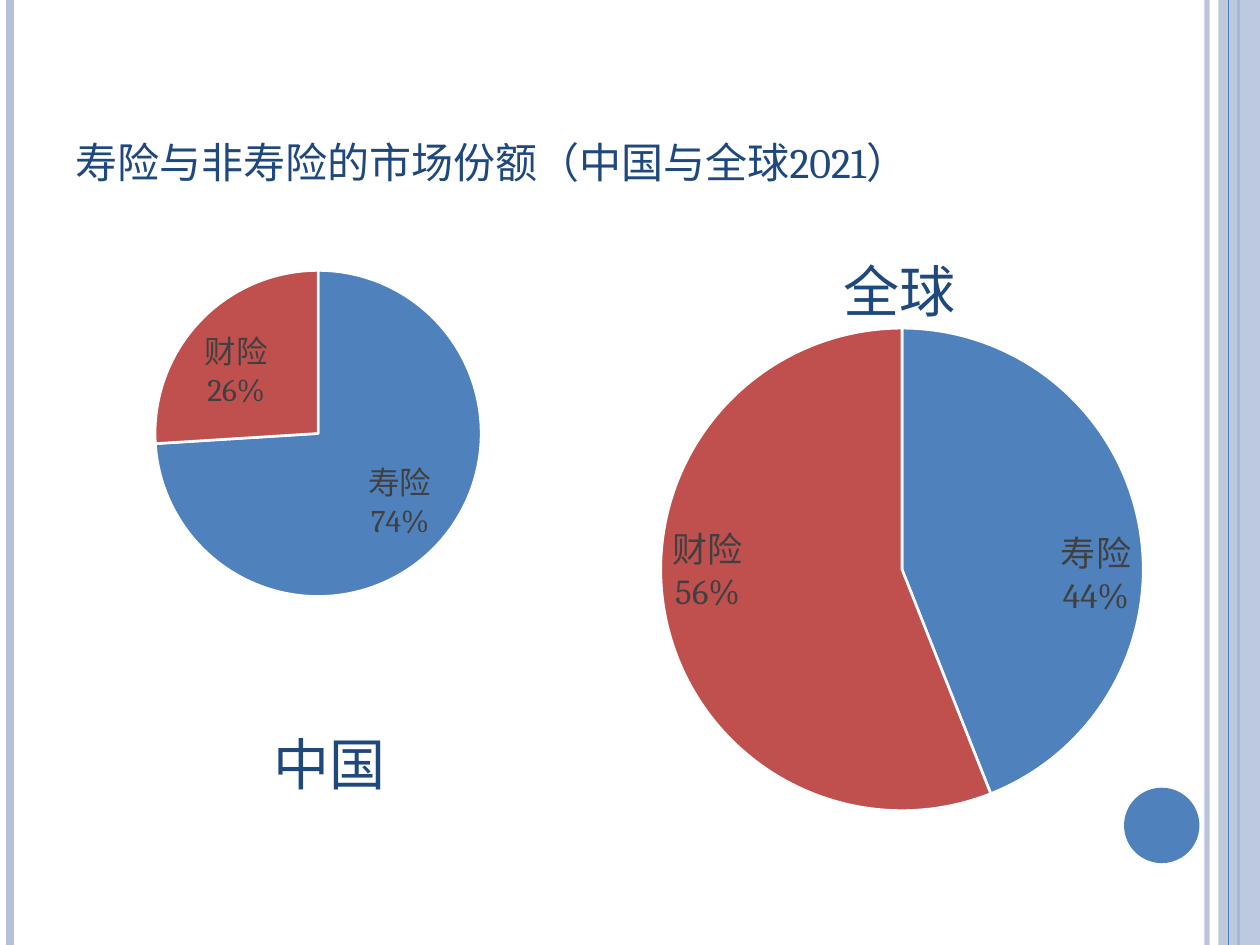
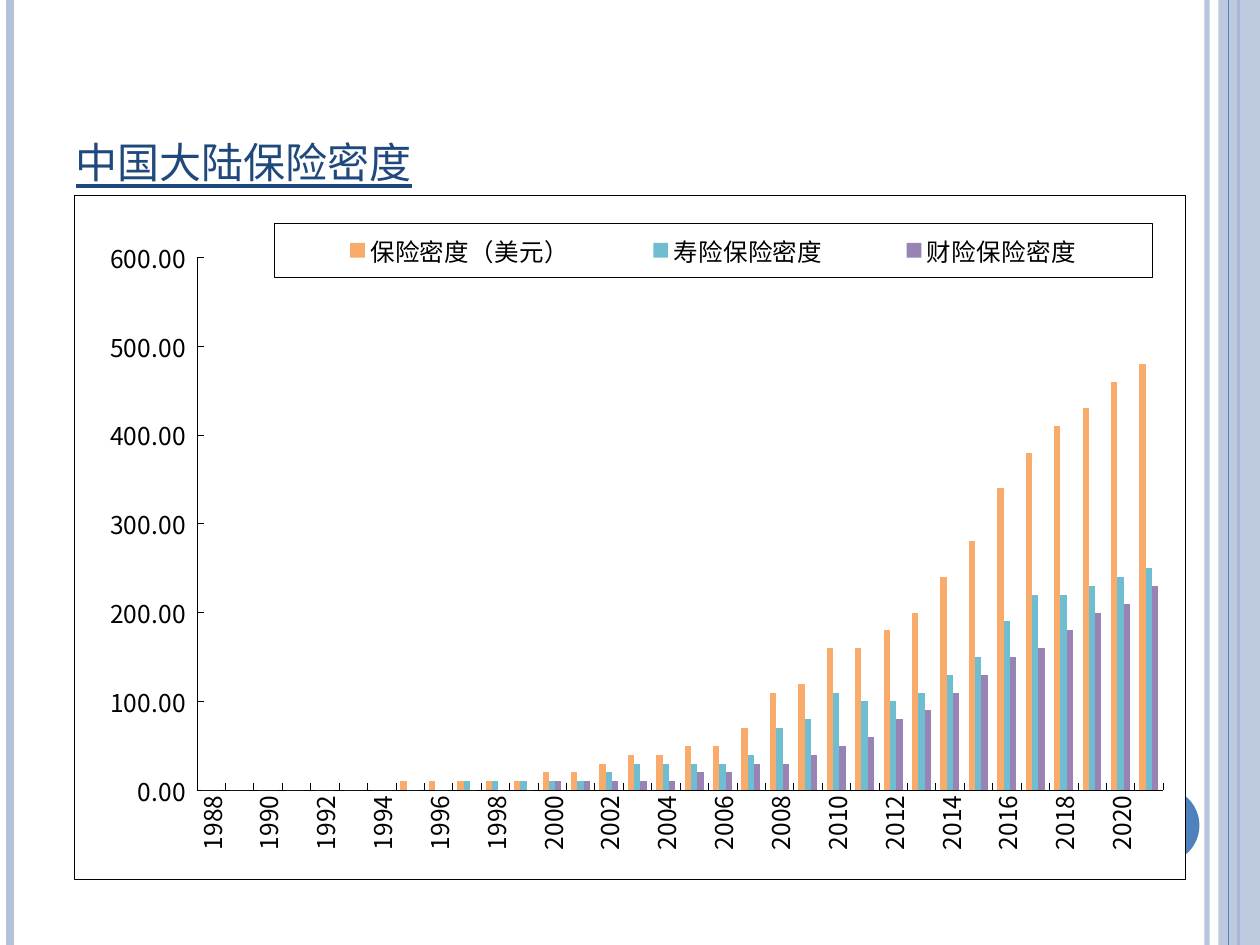
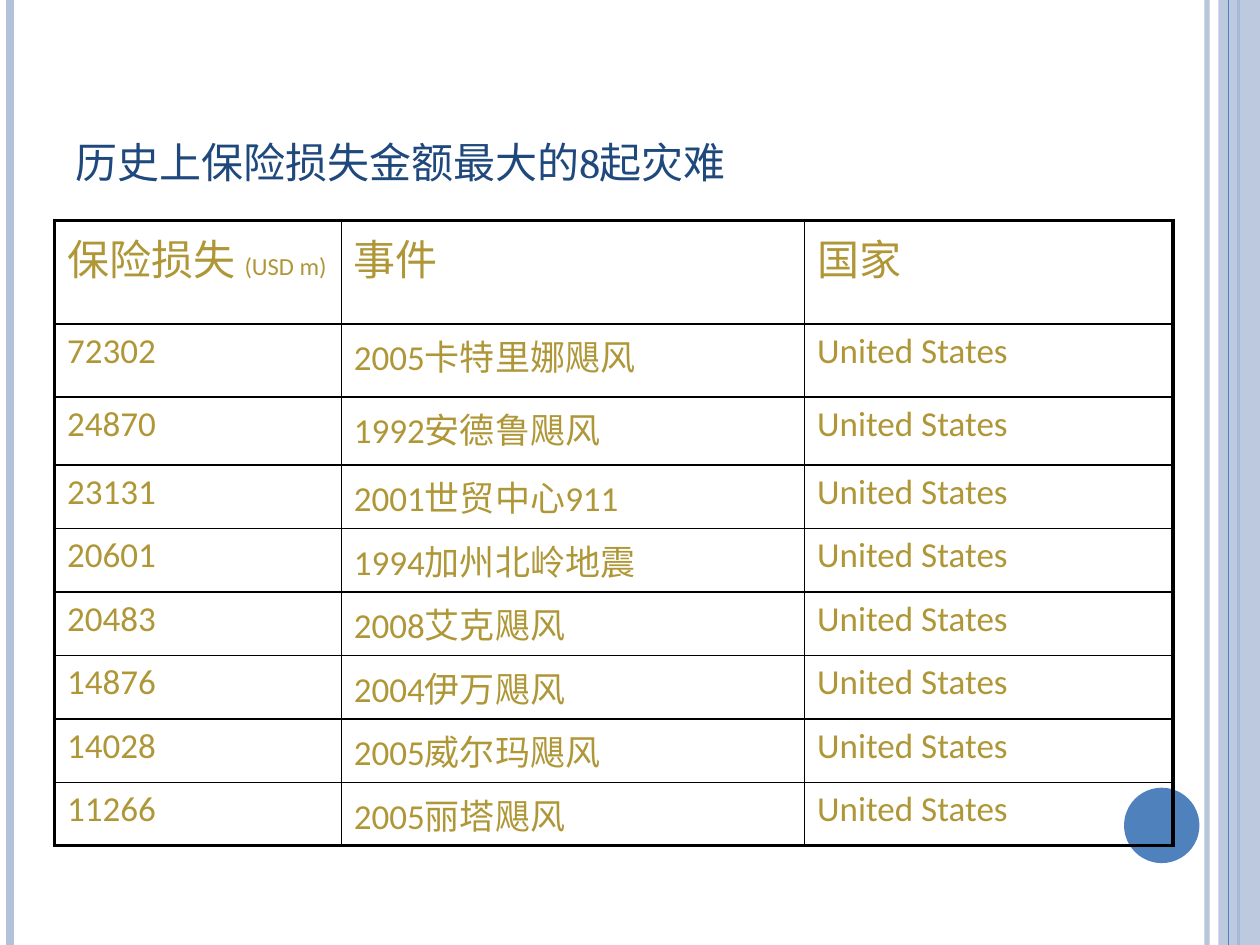
import dataclasses

import lxml.etree
import pptx
import pptx.chart.data
import pptx.dml.color
import pptx.enum.chart
import pptx.enum.shapes
import pptx.enum.text
import pptx.oxml
import pptx.oxml.ns
import pptx.util

Cm, Pt = pptx.util.Cm, pptx.util.Pt
RGB = pptx.dml.color.RGBColor.from_string
qn = pptx.oxml.ns.qn


@dataclasses.dataclass(frozen=True)
class Theme:
    navy: str = "1F497D"
    blue: str = "4F81BD"
    pale: str = "B3C1DB"
    red: str = "C0504D"
    gold: str = "AF9738"
    grey: str = "404040"
    black: str = "000000"
    white: str = "FFFFFF"
    density: tuple = ("F9AB6B", "6FBDD1", "9983B5")
    heading_font: str = "Cambria"
    table_font: str = "Calibri"
    axis_font: str = "Noto Sans CJK SC"
    title_size: int = 30
    caption_size: int = 32
    header_size: int = 24
    cell_size: int = 20
    small_size: int = 14


theme = Theme()


def style(font, face, size, color):
    font.name, font.size = face, Pt(size)
    font.color.rgb = RGB(color)


def set_layout(parent, index, x, y, w, h, inner=False):
    """Give a chart part a manual layout, in fractions of the chart."""
    for old in parent.findall(qn("c:layout")):
        parent.remove(old)
    layout = lxml.etree.Element(qn("c:layout"))
    manual = lxml.etree.SubElement(layout, qn("c:manualLayout"))
    settings = [("layoutTarget", "inner")] if inner else []
    settings += [("xMode", "edge"), ("yMode", "edge"), ("x", x), ("y", y), ("w", w), ("h", h)]
    for tag, value in settings:
        lxml.etree.SubElement(manual, qn(f"c:{tag}")).set("val", str(value))
    parent.insert(index, layout)


prs = pptx.Presentation()
prs.slide_width, prs.slide_height = Cm(25.4), Cm(19.05)
title_only = prs.slide_layouts[5]
for placeholder in list(title_only.placeholders)[1:]:
    placeholder.element.getparent().remove(placeholder.element)

# Titles
titles = [
    ("寿险与非寿险的市场份额（中国与全球2021）", 22.43, False),
    ("中国大陆保险密度", 20.75, True),
    ("历史上保险损失金额最大的8起灾难", 20.75, False),
]
for text, width, underlined in titles:
    title = prs.slides.add_slide(title_only).shapes.title
    title.left, title.top, title.width, title.height = Cm(1.27), Cm(0.76), Cm(width), Cm(3.18)
    title.text_frame.text = text
    title.text_frame.vertical_anchor = pptx.enum.text.MSO_ANCHOR.BOTTOM
    title.text_frame.auto_size = pptx.enum.text.MSO_AUTO_SIZE.NONE
    heading = title.text_frame.paragraphs[0]
    heading.alignment = pptx.enum.text.PP_ALIGN.LEFT
    style(heading.font, theme.heading_font, theme.title_size, theme.navy)
    heading.font.underline = underlined
    heading.runs[0]._r.get_or_add_rPr().set("cap", "small")
share_slide, density_slide, loss_slide = prs.slides

# Side bands and disc, drawn once and moved to the shared layout
decor = []
for x, color, weight in [(24.33, theme.pale, 3), (0.2, theme.pale, 4.5),
                         (24.97, theme.blue, 1.5), (24.77, theme.blue, 0.75)]:
    rule = share_slide.shapes.add_connector(
        pptx.enum.shapes.MSO_CONNECTOR.STRAIGHT, Cm(x), 0, Cm(x), prs.slide_height)
    rule.line.color.rgb, rule.line.width = RGB(color), Pt(weight)
    lxml.etree.SubElement(rule._element.spPr, qn("a:effectLst"))
    decor.append(rule)
for kind, x, y, w, h, color in [
        (pptx.enum.shapes.MSO_SHAPE.RECTANGLE, 24.56, 0, 0.84, 19.05, theme.pale),
        (pptx.enum.shapes.MSO_SHAPE.OVAL, 22.66, 15.88, 1.52, 1.52, theme.blue)]:
    block = share_slide.shapes.add_shape(kind, Cm(x), Cm(y), Cm(w), Cm(h))
    block.shadow.inherit = False
    block.fill.solid()
    block.fill.fore_color.rgb = RGB(color)
    block.line.fill.background()
    decor.append(block)
edge_rule, left_rule, covered_rule, top_rule, band, disc = decor
for part, opacity in [(edge_rule, 93), (band, 87)]:
    color = next(part._element.spPr.iter(qn("a:srgbClr")))
    lxml.etree.SubElement(color, qn("a:alpha")).set("val", str(opacity * 1000))
for part in (edge_rule, left_rule, covered_rule, band, top_rule, disc):
    title_only.shapes._spTree.append(part._element)

# Slide 1: market shares
for caption, x, y in [("中国", 5.26, 13.64), ("全球", 16.76, 4.11)]:
    label = share_slide.shapes.add_textbox(Cm(x), Cm(y), Cm(2.79), Cm(2.54)).text_frame
    label.word_wrap = True
    label.vertical_anchor = pptx.enum.text.MSO_ANCHOR.BOTTOM
    label.text = caption
    style(label.paragraphs[0].font, theme.heading_font, theme.caption_size, theme.navy)

for shares, x, y, w, h, pie_height, size in [
        ((74, 26), -0.89, 3.94, 14.61, 9.6, 0.69, 18),
        ((44, 56), 10.31, 6.25, 15.75, 10.46, 0.93, 20)]:
    data = pptx.chart.data.CategoryChartData()
    data.categories = ["寿险", "财险"]
    data.add_series("Series 1", shares)
    pie = share_slide.shapes.add_chart(
        pptx.enum.chart.XL_CHART_TYPE.PIE, Cm(x), Cm(y), Cm(w), Cm(h), data).chart
    pie.has_title = pie.has_legend = False
    style(pie.font, theme.heading_font, size, theme.black)
    plot = pie.plots[0]
    plot.vary_by_categories = True
    for index, color in enumerate((theme.blue, theme.red)):
        slice_format = plot.series[0].points[index].format
        slice_format.fill.solid()
        slice_format.fill.fore_color.rgb = RGB(color)
        slice_format.line.color.rgb, slice_format.line.width = RGB(theme.white), Pt(1.5)
    plot.has_data_labels = True
    labels = plot.data_labels
    labels.show_value = False
    labels.show_category_name = labels.show_percentage = True
    labels.number_format, labels.number_format_is_linked = "0%", False
    labels.position = pptx.enum.chart.XL_LABEL_POSITION.INSIDE_END
    style(labels.font, theme.heading_font, size, theme.grey)
    separator = lxml.etree.Element(qn("c:separator"))
    separator.text = "\n"
    labels._element.find(qn("c:showBubbleSize")).addnext(separator)
    pie_width = round(pie_height * h / w, 2)
    set_layout(pie._chartSpace.chart.plotArea, 0, (1 - pie_width) / 2, (1 - pie_height) / 2,
               pie_width, pie_height, inner=True)

# Slide 2: insurance density by year
densities = {
    "保险密度（美元）": [0, 0, 0, 0, 0, 0, 0, 10, 10, 10, 10, 10, 20, 20, 30, 40, 40, 50, 50, 70, 110, 120,
                 160, 160, 180, 200, 240, 280, 340, 380, 410, 430, 460, 480],
    "寿险保险密度": [0, 0, 0, 0, 0, 0, 0, 0, 0, 10, 10, 10, 10, 10, 20, 30, 30, 30, 30, 40, 70, 80,
               110, 100, 100, 110, 130, 150, 190, 220, 220, 230, 240, 250],
    "财险保险密度": [0, 0, 0, 0, 0, 0, 0, 0, 0, 0, 0, 0, 10, 10, 10, 10, 10, 20, 20, 30, 30, 40,
               50, 60, 80, 90, 110, 130, 150, 160, 180, 200, 210, 230],
}
data = pptx.chart.data.CategoryChartData()
data.categories = [str(year) for year in range(1988, 2022)]
for name, values in densities.items():
    data.add_series(name, values)
columns = density_slide.shapes.add_chart(
    pptx.enum.chart.XL_CHART_TYPE.COLUMN_CLUSTERED,
    Cm(1.5), Cm(3.94), Cm(22.4), Cm(13.79), data).chart
columns.has_title = False
style(columns.font, theme.axis_font, theme.small_size, theme.black)
plot = columns.plots[0]
plot.gap_width, plot.overlap, plot.vary_by_categories = 150, 0, False
for series, color in zip(plot.series, theme.density):
    series.format.fill.solid()
    series.format.fill.fore_color.rgb = RGB(color)

# Axes
years, dollars = columns.category_axis, columns.value_axis
for axis in (years, dollars):
    axis.has_major_gridlines = False
    axis.major_tick_mark = pptx.enum.chart.XL_TICK_MARK.INSIDE
    axis.format.line.color.rgb, axis.format.line.width = RGB(theme.black), Pt(0.25)
    style(axis.tick_labels.font, theme.axis_font, theme.small_size, theme.black)
dollars.minimum_scale, dollars.maximum_scale, dollars.major_unit = 0, 600, 100
dollars.tick_labels.number_format = "#,##0.00_ "
dollars.tick_labels.number_format_is_linked = False
upright = years._element.find(qn("c:txPr")).find(qn("a:bodyPr"))
upright.set("rot", "-5400000")
upright.set("vert", "horz")
skip = lxml.etree.Element(qn("c:tickLblSkip"))
skip.set("val", "2")
years._element.find(qn("c:noMultiLvlLbl")).addprevious(skip)

# Legend, plot area and frames
columns.has_legend = True
legend = columns.legend
legend.position = pptx.enum.chart.XL_LEGEND_POSITION.RIGHT
legend.include_in_layout = False
style(legend.font, theme.axis_font, theme.small_size, theme.black)
set_layout(legend._element, 1, 0.18, 0.04, 0.79, 0.08)
set_layout(columns._chartSpace.chart.plotArea, 0, 0.11, 0.09, 0.87, 0.78, inner=True)
for neighbour in (legend._element.find(qn("c:overlay")), columns._chartSpace.chart):
    neighbour.addnext(pptx.oxml.parse_xml(
        f'<c:spPr {pptx.oxml.ns.nsdecls("c", "a")}>'
        f'<a:solidFill><a:srgbClr val="{theme.white}"/></a:solidFill>'
        f'<a:ln w="{Pt(0.25)}"><a:solidFill><a:srgbClr val="{theme.black}"/></a:solidFill></a:ln>'
        '</c:spPr>'))

# Slide 3: largest insured losses
losses = [
    ("72302", "2005卡特里娜飓风"), ("24870", "1992安德鲁飓风"), ("23131", "2001世贸中心911"),
    ("20601", "1994加州北岭地震"), ("20483", "2008艾克飓风"), ("14876", "2004伊万飓风"),
    ("14028", "2005威尔玛飓风"), ("11266", "2005丽塔飓风"),
]
rows = [("保险损失 ", "事件", "国家")] + [(*loss, "United States") for loss in losses]
widths = [5.78, 9.34, 7.43]
heights = [2.09, 1.47, 1.37] + [1.28] * 6
table = loss_slide.shapes.add_table(
    len(rows), len(widths), Cm(1.1), Cm(4.44), Cm(sum(widths)), Cm(sum(heights))).table
table.first_row = table.horz_banding = False
for column, width in zip(table.columns, widths):
    column.width = Cm(width)
for r, (row, height) in enumerate(zip(rows, heights)):
    table.rows[r].height = Cm(height)
    size = theme.cell_size if r else theme.header_size
    for c, text in enumerate(row):
        cell = table.cell(r, c)
        cell.fill.background()
        cell.text = text
        paragraph = cell.text_frame.paragraphs[0]
        paragraph.space_before = Pt(size * 0.2)
        style(paragraph.font, theme.table_font, size, theme.gold)
        # Heavy outer frame, fine inner rules
        outer = {"L": c == 0, "R": c == len(widths) - 1, "T": r == 0, "B": r == len(rows) - 1}
        for index, (side, on_edge) in enumerate(outer.items()):
            cell._tc.get_or_add_tcPr().insert(index, pptx.oxml.parse_xml(
                f'<a:ln{side} {pptx.oxml.ns.nsdecls("a")} w="{Pt(2.25 if on_edge else 1)}">'
                f'<a:solidFill><a:srgbClr val="{theme.black}"/></a:solidFill></a:ln{side}>'))
unit = table.cell(0, 0).text_frame.paragraphs[0].add_run()
unit.text = "(USD m)"
unit.font.size = Pt(theme.small_size)

prs.save("out.pptx")
